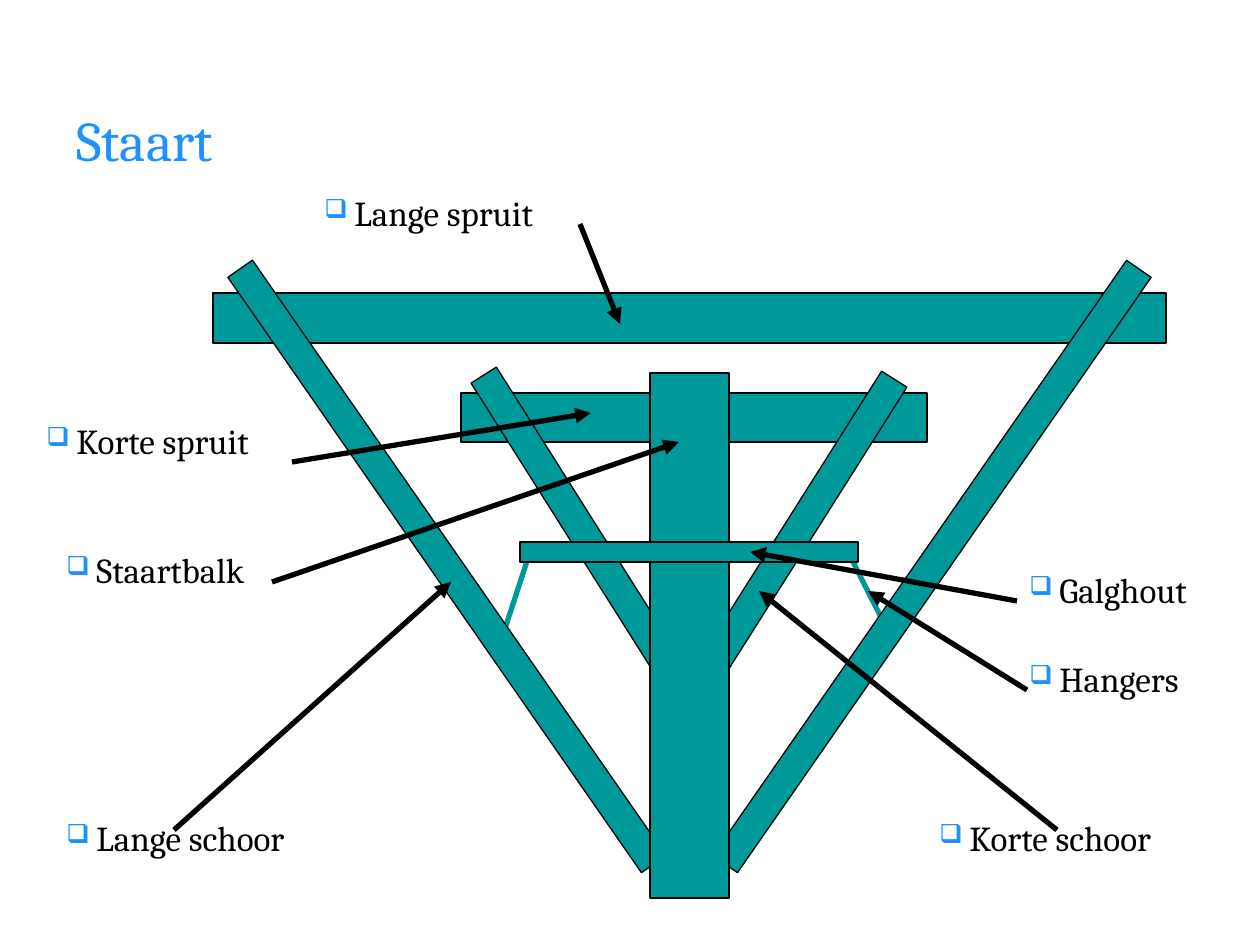
import pptx
import pptx.util
import pptx.dml.color
import pptx.enum.shapes
import pptx.enum.text
from lxml import etree

BLUE, TEAL, BLACK = "1C91FF", "009999", "000000"
FONT = "Cambria"
TITLE = ("Staart", (64, 96, 1033, 87))
HANGERS = [((530, 552), (501, 641)), ((848, 552), (888, 631))]
BEAMS = [
    ((213, 293, 953, 50), 0),
    ((461, 393, 466, 49), 0),
    ((432, 204, 30, 725), -34.8),
    ((917, 204, 30, 725), 34.8),
    ((559, 349, 30, 338), -32.3),
    ((789, 353, 30, 338), 32.3),
    ((650, 373, 79, 525), 0),
    ((520, 542, 338, 20), 0),
]
LABELS = [
    ("Lange spruit", (312, 185, 271), (580, 224), (620, 324)),
    ("Korte spruit", (34, 413, 261), (292, 462), (591, 413)),
    ("Staartbalk", (54, 542, 224), (272, 582), (679, 442)),
    ("Lange schoor", (54, 810, 291), (174, 830), (451, 582)),
    ("Korte schoor", (927, 810, 280), (1057, 830), (759, 591)),
    ("Galghout", (1017, 562, 208), (1017, 601), (750, 552)),
    ("Hangers", (1017, 651, 189), (1027, 690), (868, 591)),
]
LABEL_H, INDENT = 72, 30


def px(n):
    return round(n * 914400 / 126)


def rgb(color):
    return pptx.dml.color.RGBColor.from_string(color)


def add(parent, tag, **attrs):
    return etree.SubElement(parent, pptx.oxml.ns.qn(tag), attrs)


def beam(s, box, angle):
    sp = s.shapes.add_shape(pptx.enum.shapes.MSO_SHAPE.RECTANGLE, *map(px, box))
    sp.shadow.inherit = False
    sp.rotation = angle
    sp.fill.solid()
    sp.fill.fore_color.rgb = rgb(TEAL)
    sp.line.color.rgb = rgb(BLACK)
    sp.line.width = pptx.util.Pt(0.75)


def line(s, start, end, color, arrow=False):
    c = s.shapes.add_connector(pptx.enum.shapes.MSO_CONNECTOR.STRAIGHT, *map(px, start + end))
    c.line.color.rgb = rgb(color)
    c.line.width = pptx.util.Pt(3)
    if arrow:
        add(c.line._get_or_add_ln(), "a:tailEnd", type="triangle")
    add(c._element.spPr, "a:effectLst")


def text(s, words, box, size, color, anchor, bullet=False):
    tf = s.shapes.add_textbox(*map(px, box)).text_frame
    tf.word_wrap = True
    tf.vertical_anchor = anchor
    p = tf.paragraphs[0]
    if bullet:
        pPr = p._p.get_or_add_pPr()
        pPr.set("marL", str(px(INDENT)))
        pPr.set("indent", str(-px(INDENT)))
        add(add(pPr, "a:buClr"), "a:srgbClr", val=BLUE)
        add(pPr, "a:buSzPct", val="75000")
        add(pPr, "a:buChar", char="❑")
    r = p.add_run()
    r.text = words
    for key, value in {"name": FONT, "size": pptx.util.Pt(size)}.items():
        setattr(r.font, key, value)
    r.font.color.rgb = rgb(color)


def main():
    prs = pptx.Presentation()
    prs.slide_width, prs.slide_height = px(1260), px(945)
    s = prs.slides.add_slide(prs.slide_layouts[6])
    anchors = pptx.enum.text.MSO_ANCHOR
    text(s, *TITLE, 32, BLUE, anchors.MIDDLE)
    for start, end in HANGERS:
        line(s, start, end, TEAL)
    for box, angle in BEAMS:
        beam(s, box, angle)
    for _, _, start, end in LABELS:
        line(s, start, end, BLACK, arrow=True)
    for words, box, _, _ in LABELS:
        text(s, words, box + (LABEL_H,), 20, BLACK, anchors.TOP, bullet=True)
    prs.save("out.pptx")


if __name__ == "__main__":
    main()
